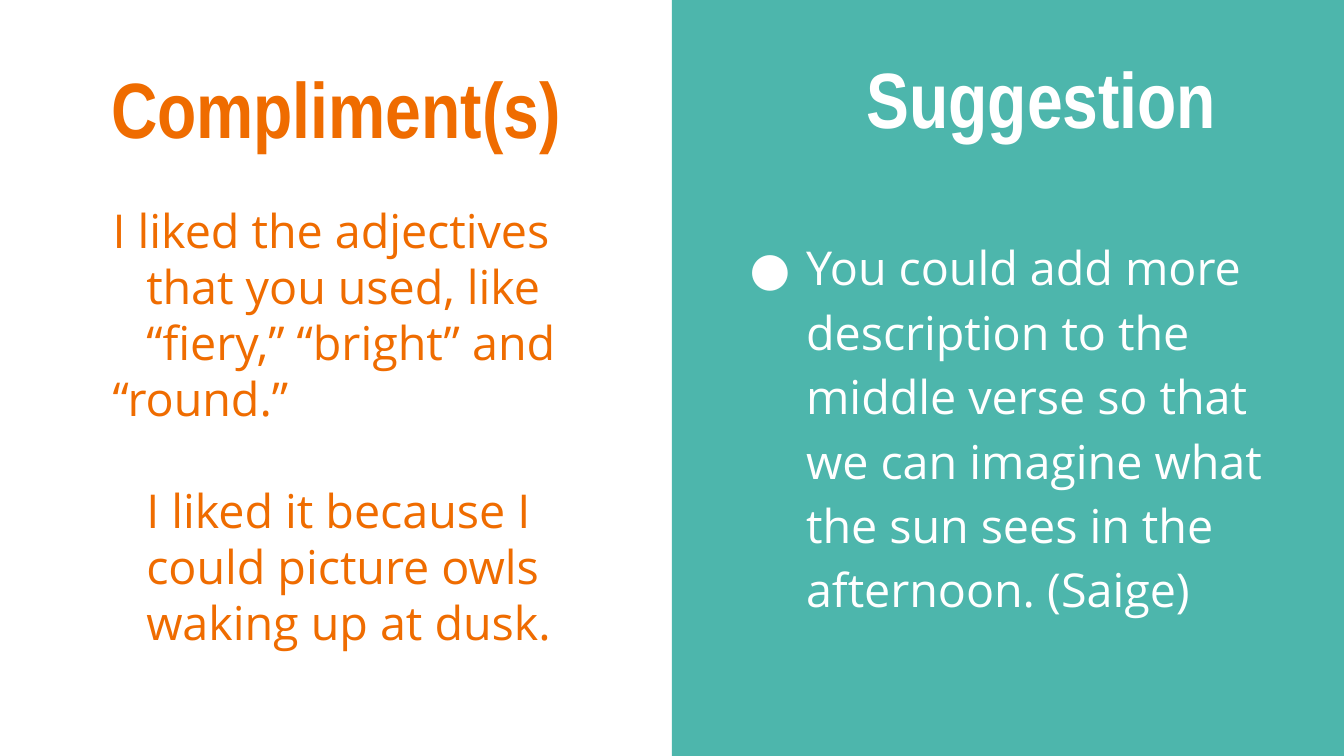
"""Build a two-panel feedback slide with compliments and a suggestion."""
import pptx
import pptx.util
import pptx.dml.color
import pptx.enum.shapes
import pptx.enum.text
from lxml import etree

Inches = pptx.util.Inches
Pt = pptx.util.Pt
Color = pptx.dml.color.RGBColor.from_string
Anchor = pptx.enum.text.MSO_ANCHOR
Align = pptx.enum.text.PP_ALIGN

SLIDE_WIDTH = 10
SLIDE_HEIGHT = SLIDE_WIDTH * 9 / 16
INSET = 0.1
THEME = {
    "orange": "EF6C00", "teal": "4DB6AC", "white": "FFFFFF",
    "title_font": "Arial Narrow", "title_size": 42,
    "body_font": "Open Sans", "body_size": 25, "body_line": 30,
}
PANELS = [
    {
        "title": "Compliment(s)", "title_box": (0.29, 0.54, 4.42, 0.71),
        "body_box": (0.49, 1.4, 4.2, 3.83),
        "color": "orange", "fill": "white",
        "anchor": Anchor.TOP, "bottom_inset": INSET, "line_spacing": 1.0,
        "paragraphs": [
            {"text": "I liked the adjectives that you used, like “fiery,” “bright” and",
             "indent": -0.25},
            {"text": "“round.”", "indent": -0.25},
            {"text": "I liked it because I could picture owls waking up at dusk.",
             "indent": 0, "lines_before": 1},
        ],
    },
    {
        "title": "Suggestion", "title_box": (5.54, 0.46, 4.42, 0.71),
        "body_box": (5.4, 1.48, 4.2, 3.83),
        "color": "white", "fill": "teal",
        "anchor": Anchor.MIDDLE, "bottom_inset": 0.58, "line_spacing": 1.15,
        "paragraphs": [
            {"text": "You could add more description to the middle verse so that "
                     "we can imagine what the sun sees in the afternoon. (Saige)",
             "indent": -0.42, "bullet": "●"},
        ],
    },
]


def add_text_frame(slide, box, anchor, bottom_inset=INSET, fill=None):
    textbox = slide.shapes.add_textbox(*map(Inches, box))
    if fill:
        textbox.fill.solid()
        textbox.fill.fore_color.rgb = Color(THEME[fill])
    frame = textbox.text_frame
    frame.word_wrap = True
    frame.vertical_anchor = anchor
    frame.margin_left = frame.margin_right = frame.margin_top = Inches(INSET)
    frame.margin_bottom = Inches(bottom_inset)
    return frame


def style(paragraph, role, color):
    for run in paragraph.runs:
        run.font.name = THEME[role + "_font"]
        run.font.size = Pt(THEME[role + "_size"])
        run.font.bold = role == "title"
        run.font.color.rgb = Color(THEME[color])


def set_indent(paragraph, indent, bullet, color):
    properties = paragraph._p.get_or_add_pPr()
    properties.set("marL", str(Inches(0.5)))
    properties.set("indent", str(Inches(indent)))
    if bullet:
        tag = pptx.oxml.ns.qn
        bullet_color = etree.SubElement(properties, tag("a:buClr"))
        etree.SubElement(bullet_color, tag("a:srgbClr"), val=THEME[color])
        etree.SubElement(properties, tag("a:buFont"), typeface=THEME["body_font"])
        etree.SubElement(properties, tag("a:buChar"), char=bullet)


def add_panel(slide, panel):
    heading = add_text_frame(slide, panel["title_box"], Anchor.BOTTOM)
    heading.text = panel["title"]
    heading.paragraphs[0].alignment = Align.CENTER
    style(heading.paragraphs[0], "title", panel["color"])

    body = add_text_frame(slide, panel["body_box"], panel["anchor"],
                          panel["bottom_inset"], panel["fill"])
    body.text = "\n".join(item["text"] for item in panel["paragraphs"])
    for paragraph, item in zip(body.paragraphs, panel["paragraphs"]):
        set_indent(paragraph, item["indent"], item.get("bullet"), panel["color"])
        paragraph.line_spacing = panel["line_spacing"]
        if "lines_before" in item:
            paragraph.space_before = Pt(item["lines_before"] * THEME["body_line"])
        style(paragraph, "body", panel["color"])


def main():
    presentation = pptx.Presentation()
    presentation.slide_width = Inches(SLIDE_WIDTH)
    presentation.slide_height = Inches(SLIDE_HEIGHT)
    slide = presentation.slides.add_slide(presentation.slide_layouts[6])

    half = SLIDE_WIDTH / 2
    backdrop = slide.shapes.add_shape(
        pptx.enum.shapes.MSO_SHAPE.RECTANGLE,
        Inches(half), 0, Inches(half), Inches(SLIDE_HEIGHT))
    backdrop.shadow.inherit = False
    backdrop.fill.solid()
    backdrop.fill.fore_color.rgb = Color(THEME["teal"])
    backdrop.line.fill.background()

    for panel in PANELS:
        add_panel(slide, panel)
    presentation.save("out.pptx")


if __name__ == "__main__":
    main()
